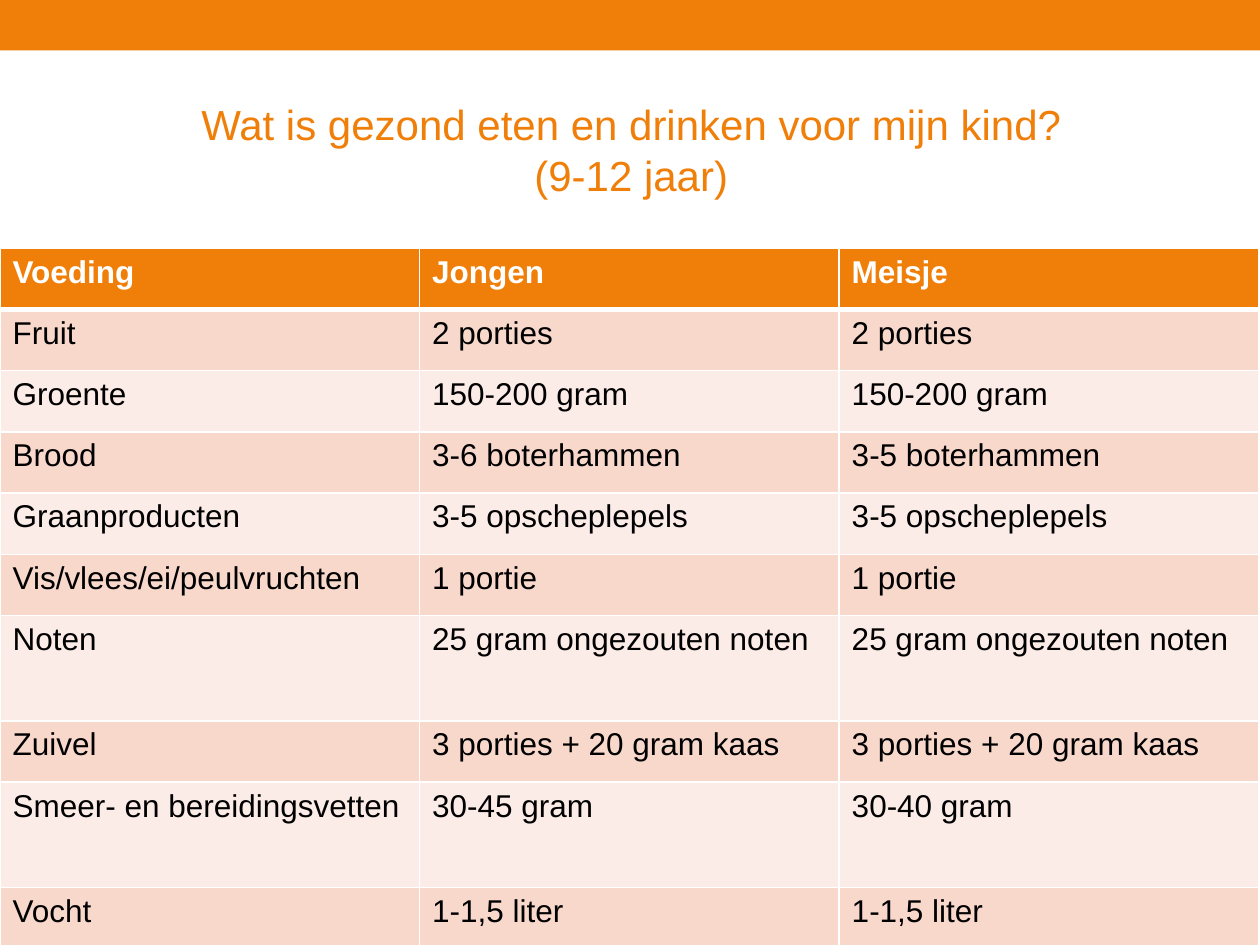
"""Build a slide with a table of daily food amounts for children aged 9 to 12."""
import pptx
import pptx.dml.color
import pptx.enum.shapes
import pptx.enum.text
import pptx.oxml
import pptx.oxml.ns
import pptx.util

Inches = pptx.util.Inches
ORANGE = "F07F09"
WHITE = "FFFFFF"


def paint(color, code):
    color.rgb = pptx.dml.color.RGBColor.from_string(code)


def write(frame, text, size=18, color="000000", bold=False, align=None):
    frame.word_wrap = True
    for i, line in enumerate(text.split("\n")):
        par = frame.paragraphs[0] if i == 0 else frame.add_paragraph()
        par.alignment = align
        run = par.add_run()
        run.text = line
        run.font.name = "Arial"
        run.font.size = pptx.util.Pt(size)
        run.font.bold = bold
        paint(run.font.color, color)


deck = pptx.Presentation()
deck.slide_width = Inches(10)
deck.slide_height = Inches(7.5)
slide = deck.slides.add_slide(deck.slide_layouts[6])

bar = slide.shapes.add_shape(
    pptx.enum.shapes.MSO_SHAPE.RECTANGLE, 0, 0, Inches(10), Inches(0.4))
bar.shadow.inherit = False
bar.fill.solid()
paint(bar.fill.fore_color, ORANGE)
bar.line.fill.background()

rows = [
    ("Voeding", "Jongen", "Meisje"),
    ("Fruit", "2 porties", "2 porties"),
    ("Groente", "150-200 gram", "150-200 gram"),
    ("Brood", "3-6 boterhammen", "3-5 boterhammen"),
    ("Graanproducten", "3-5 opscheplepels", "3-5 opscheplepels"),
    ("Vis/vlees/ei/peulvruchten", "1 portie", "1 portie"),
    ("Noten", "25 gram ongezouten noten", "25 gram ongezouten noten"),
    ("Zuivel", "3 porties + 20 gram kaas", "3 porties + 20 gram kaas"),
    ("Smeer- en bereidingsvetten", "30-45 gram", "30-40 gram"),
    ("Vocht", "1-1,5 liter", "1-1,5 liter"),
]
tall = ("Noten", "Smeer- en bereidingsvetten")

table = slide.shapes.add_table(
    len(rows), 3, 0, Inches(1.97), Inches(9.99), Inches(5.56)).table
for col in table.columns:
    col.width = Inches(3.33)

for r, row in enumerate(rows):
    table.rows[r].height = Inches((60.3 if row[0] in tall else 35) / 72)
    head = r == 0
    shade = ORANGE if head else ("FCECE7", "F9D8CC")[r % 2]
    for c, text in enumerate(row):
        cell = table.cell(r, c)
        cell.fill.solid()
        paint(cell.fill.fore_color, shade)
        write(cell.text_frame, text, bold=head,
              color=WHITE if head else "000000")
        props = cell._tc.get_or_add_tcPr()
        for i, side in enumerate("LRTB"):
            thick = (r, side) in ((0, "B"), (1, "T"))
            width = pptx.util.Pt(3 if thick else 1)
            props.insert(i, pptx.oxml.parse_xml(
                f'<a:ln{side} {pptx.oxml.ns.nsdecls("a")} w="{width}">'
                f'<a:solidFill><a:srgbClr val="{WHITE}"/></a:solidFill>'
                f'</a:ln{side}>'))

title = slide.shapes.add_textbox(
    Inches(0.51), Inches(0.56), Inches(9), Inches(1.25)).text_frame
title.vertical_anchor = pptx.enum.text.MSO_ANCHOR.MIDDLE
write(title, "Wat is gezond eten en drinken voor mijn kind?\n(9-12 jaar)",
      size=24, color=ORANGE, align=pptx.enum.text.PP_ALIGN.CENTER)

deck.save("out.pptx")
